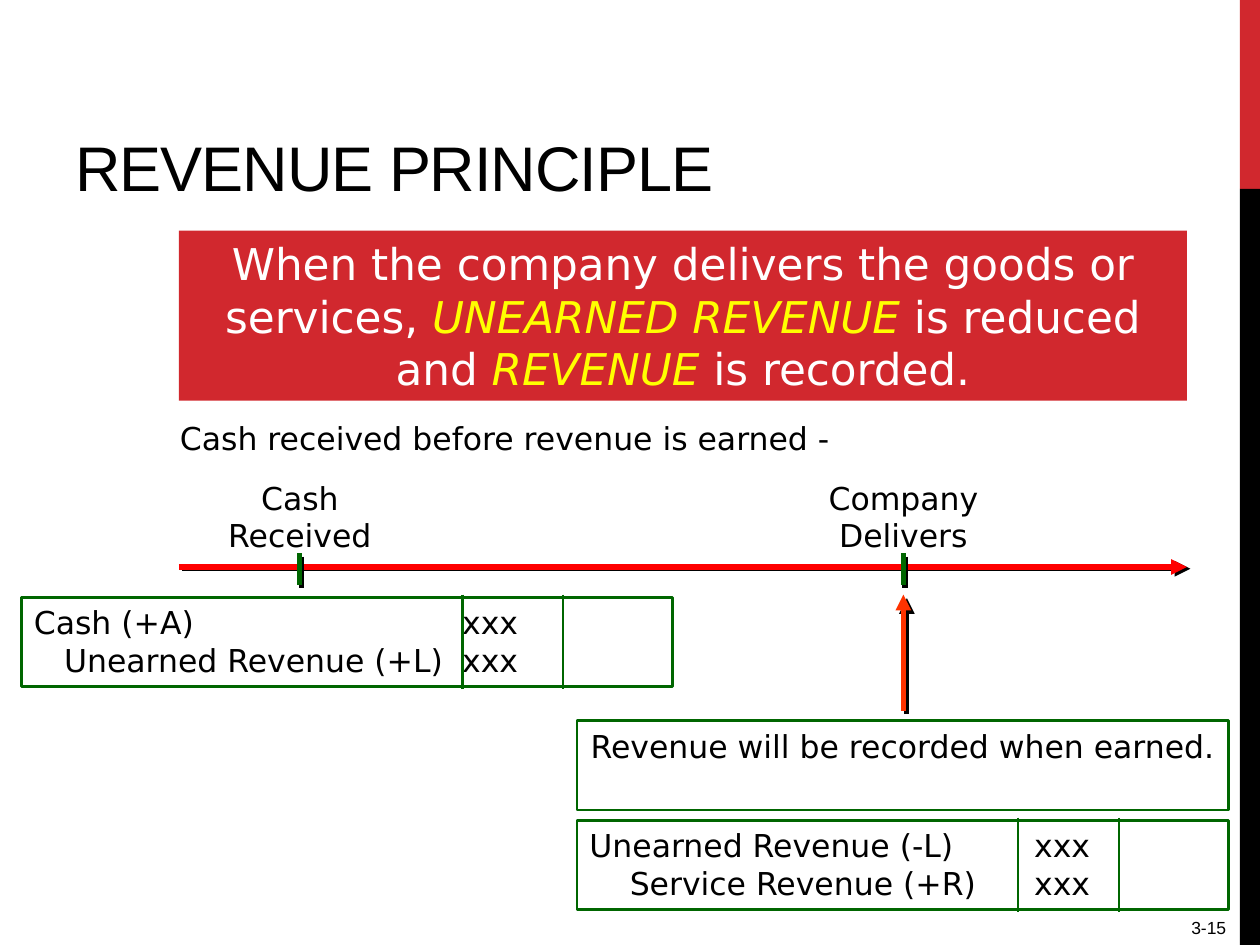
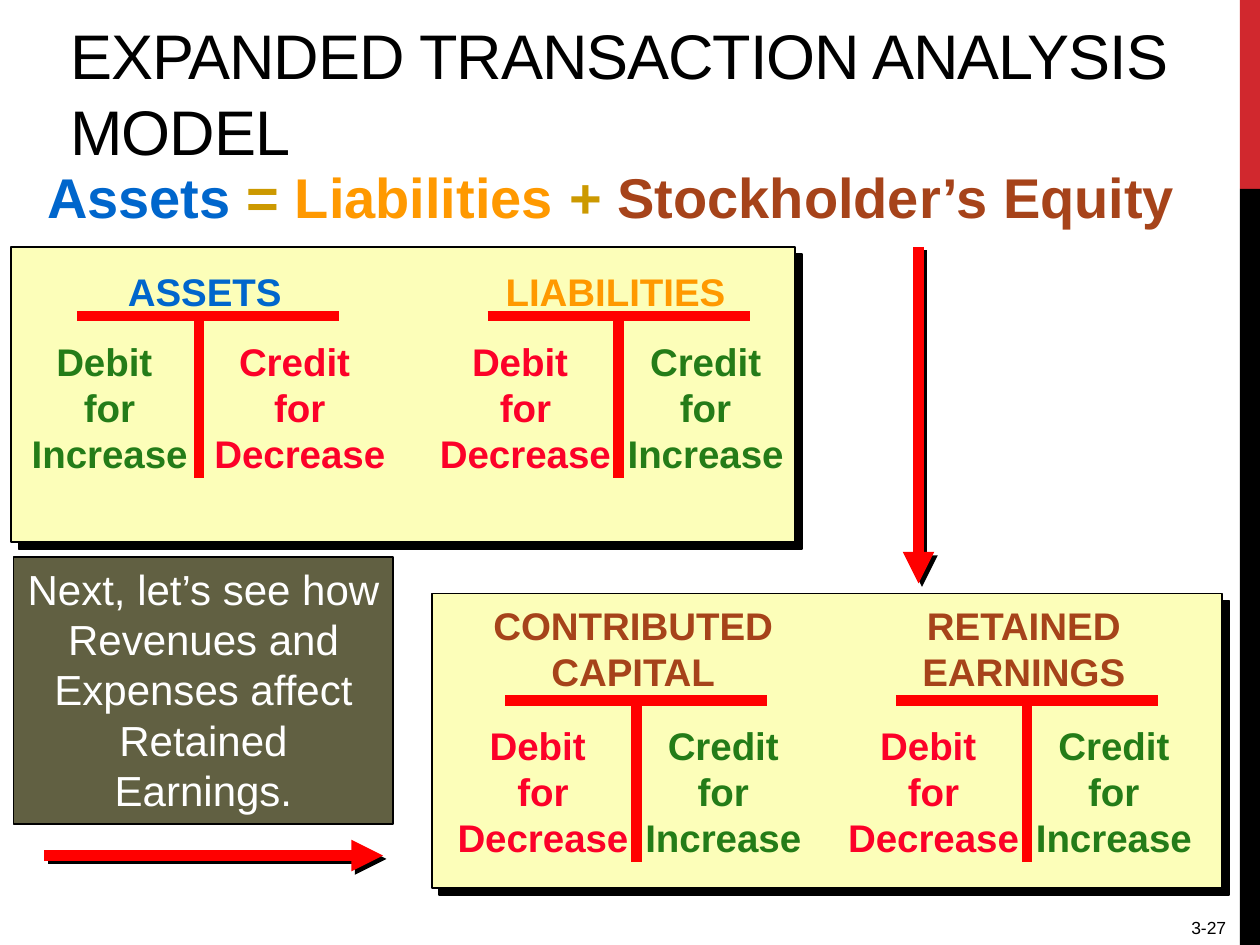
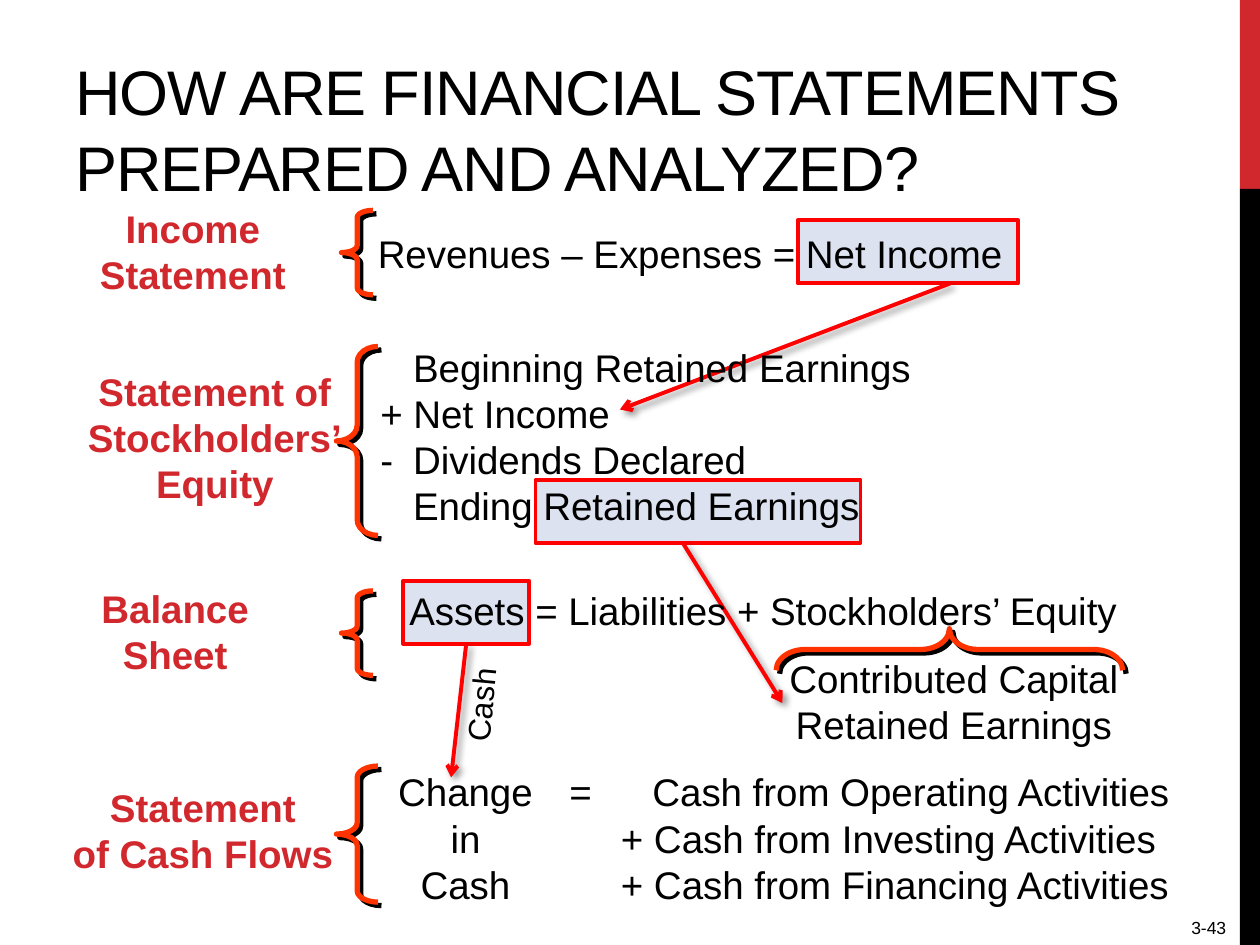
import dataclasses

import pptx
import pptx.dml.color
import pptx.enum.shapes
import pptx.enum.text
import pptx.oxml
import pptx.oxml.ns
import pptx.util

PX = 9144  # EMU in one px, 100 px to the inch
SHAPE = pptx.enum.shapes.MSO_SHAPE
ALIGN = pptx.enum.text.PP_ALIGN
ANCHOR = pptx.enum.text.MSO_ANCHOR
LEFT, CENTER, RIGHT = ALIGN.LEFT, ALIGN.CENTER, ALIGN.RIGHT


@dataclasses.dataclass(frozen=True)
class Theme:
    # colours
    black: str = "000000"
    white: str = "FFFFFF"
    brand: str = "D1282E"
    red: str = "FF0000"
    orange_red: str = "FF3300"
    yellow: str = "FFFF00"
    ledger: str = "006600"
    cream: str = "FCFEB9"
    olive: str = "616042"
    highlight: str = "DCE2EF"
    asset: str = "0066CC"
    liability: str = "FF9900"
    equity: str = "A6431A"
    operator: str = "CC9900"
    increase: str = "247C18"
    decrease: str = "FC0128"
    # fonts and type sizes
    sans: str = "Arial"
    wide: str = "DejaVu Sans"
    title: int = 36
    equation: int = 32
    banner: int = 25
    callout: int = 24
    body: int = 22
    label: int = 18
    number: int = 10
    # shadows: opacity in percent, blur in pt, distance in pt, angle in degrees
    axis_shadow: tuple = (100, 0, 2.2, 27)
    tick_shadow: tuple = (100, 0, 2.2, 63)
    hard_shadow: tuple = (100, 0, 2.8, 45)
    panel_shadow: tuple = (100, 0, 5.7, 45)
    soft_shadow: tuple = (40, 4, 3, 45)


T = Theme()


def px(*lengths):
    return [round(n * PX) for n in lengths]


def rgb(color):
    return pptx.dml.color.RGBColor.from_string(color)


def xml(parent, body):
    """Append one DrawingML element to parent."""
    tag, _, rest = body.partition(" ")
    ns = pptx.oxml.ns.nsdecls("a")
    parent.append(pptx.oxml.parse_xml(f"<a:{tag} {ns} {rest}"))


class Deck:
    def __init__(self):
        self.prs = pptx.Presentation()
        self.prs.slide_width, self.prs.slide_height = px(1000, 750)
        self.s = None

    def slide(self, title, number, left=50, top=17):
        self.s = self.prs.slides.add_slide(self.prs.slide_layouts[6])
        self.box(984, 0, 16, 150, fill=T.brand)
        self.box(984, 150, 16, 600, fill=T.black)
        tb = self.text(left, top, 917, 150, title, T.title)
        tb.text_frame.vertical_anchor = ANCHOR.BOTTOM
        for r in tb.text_frame.paragraphs[0].runs:
            r.font._element.set("spc", "-60")
        self.text(850, 723, 133, 27, number, T.number, align=RIGHT)

    def effects(self, sp, shadow):
        """Give a shape or connector its shadow, or none."""
        body = ""
        if shadow:
            alpha, blur, dist, angle = shadow
            body = (f'<a:outerShdw blurRad="{round(blur * 12700)}" '
                    f'dist="{round(dist * 12700)}" dir="{angle * 60000}" '
                    f'algn="ctr" rotWithShape="0"><a:srgbClr val="{T.black}">'
                    f'<a:alpha val="{alpha * 1000}"/></a:srgbClr></a:outerShdw>')
        xml(sp._element.spPr, f"effectLst >{body}</a:effectLst>")

    def box(self, x, y, w, h, fill=None, line=None, width=1.0, shadow=None,
            kind=SHAPE.RECTANGLE):
        sp = self.s.shapes.add_shape(kind, *px(x, y, w, h))
        if fill:
            sp.fill.solid()
            sp.fill.fore_color.rgb = rgb(fill)
        else:
            sp.fill.background()
        if line:
            sp.line.color.rgb = rgb(line)
            sp.line.width = pptx.util.Pt(width)
        else:
            sp.line.fill.background()
        self.effects(sp, shadow)
        return sp

    def brace(self, x, y, w, h, rotation=0):
        sp = self.box(x, y, w, h, line=T.orange_red, width=3,
                      shadow=T.hard_shadow, kind=SHAPE.LEFT_BRACE)
        sp.adjustments[0] = h / w / 12
        sp.rotation = rotation

    def line(self, x1, y1, x2, y2, color=T.red, width=6.0, head=None,
             shadow=None):
        c = self.s.shapes.add_connector(
            pptx.enum.shapes.MSO_CONNECTOR.STRAIGHT, *px(x1, y1, x2, y2))
        c.line.color.rgb = rgb(color)
        c.line.width = pptx.util.Pt(width)
        if head:
            xml(c.line._get_or_add_ln(), f'tailEnd type="{head}"/>')
        self.effects(c, shadow)
        return c

    def set_text(self, sp, text, size, color=T.black, font=T.sans, bold=False,
                 align=LEFT, wrap=True, tabs=()):
        """Fill sp with a string, or with (text, colour, italic) parts."""
        tf = sp.text_frame
        tf.word_wrap = wrap
        tf.vertical_anchor = ANCHOR.TOP
        if isinstance(text, str):
            tf.text = text
            styles = None
        else:
            for part, *_ in text:
                tf.paragraphs[0].add_run().text = part
            styles = [style for _, *style in text]
        for p in tf.paragraphs:
            p.alignment = align
            if tabs:
                stops = "".join(f'<a:tab pos="{n}" algn="l"/>' for n in px(*tabs))
                xml(p._p.get_or_add_pPr(), f"tabLst >{stops}</a:tabLst>")
            for i, r in enumerate(p.runs):
                shade, italic = styles[i] if styles else (color, False)
                r.font.name, r.font.size = font, pptx.util.Pt(size)
                r.font.bold, r.font.italic = bold, italic
                r.font.color.rgb = rgb(shade)

    def text(self, x, y, w, h, text, size=T.body, **style):
        tb = self.s.shapes.add_textbox(*px(x, y, w, h))
        self.set_text(tb, text, size, **style)
        return tb

    def ledger_box(self, x, y, text, **style):
        sp = self.box(x, y, 517, 71, line=T.ledger, width=1.5)
        self.set_text(sp, text, T.label, font=T.wide, **style)

    def journal_entry(self, x, y, text, tabs):
        self.ledger_box(x, y, text, tabs=tabs)
        for column in (350, 430):
            self.line(x + column, y - 2, x + column, y + 73, T.ledger, 1.5)

    def t_account(self, x, bar, name, color, label_top, debit, credit, stem=162):
        self.line(x + 58, bar, x + 266, bar)
        self.line(x + stem, bar + 4, x + stem, bar + 128)
        self.text(x, label_top, 319, bar - label_top, name, color=color,
                  bold=True, align=CENTER)
        for left, (side, effect) in ((10, debit), (157, credit)):
            rises = effect == "Increase"
            self.text(x + left, bar + 12, 148 if rises else 156, 119,
                      f"{side}\vfor\v{effect}", bold=True, align=CENTER,
                      color=T.increase if rises else T.decrease)


def revenue_principle(d):
    d.slide("REVENUE PRINCIPLE", "3-15")
    banner = d.box(142, 183, 800, 135, fill=T.brand)
    d.set_text(banner, [
        ("When the company delivers the goods or services, ", T.white, False),
        ("UNEARNED REVENUE", T.yellow, True),
        (" is reduced and ", T.white, False),
        ("REVENUE ", T.yellow, True),
        ("is recorded.", T.white, False),
    ], T.banner, font=T.wide, align=CENTER)
    d.text(133, 328, 550, 40, "Cash received before revenue is earned -",
           T.label, font=T.wide)

    # Timeline with its two events
    d.line(142, 450, 942, 450, width=3, head="triangle", shadow=T.axis_shadow)
    for x, event in ((238, "Cash\vReceived"), (717, "Company Delivers")):
        d.text(x - 79, 375, 158, 70, event, T.label, font=T.wide, align=CENTER)
        d.line(x, 439, x, 464, T.ledger, 3, shadow=T.tick_shadow)
    d.line(717, 564, 717, 472, T.orange_red, 3, "triangle", T.hard_shadow)

    # Journal entries
    d.journal_entry(17, 474, "Cash (+A)\txxx\n\tUnearned Revenue (+L)\txxx",
                    (24, 340, 427))
    d.ledger_box(458, 572, "Revenue will be recorded when earned.", align=CENTER)
    d.journal_entry(458, 651,
                    "Unearned Revenue (-L)\txxx\n\tService Revenue (+R)\txxx",
                    (32, 353, 426))


def transaction_model(d):
    d.slide("EXPANDED TRANSACTION ANALYSIS MODEL", "3-27", left=46, top=-12)
    d.text(1, 124, 968, 64, [
        ("Assets ", T.asset, False),
        ("= ", T.operator, False),
        ("Liabilities ", T.liability, False),
        ("+ ", T.operator, False),
        ("Stockholder’s Equity", T.equity, False),
    ], T.equation, bold=True, align=CENTER)

    # Panels of T-accounts
    for x, y, w in ((9, 196, 622), (343, 471, 627)):
        d.box(x, y, w, 234, T.cream, T.black, 1, T.panel_shadow)
    d.t_account(3, 251, "ASSETS", T.asset, 208, ("Debit ", "Increase"),
                ("Credit ", "Decrease"), stem=155)
    for x, bar, name, color, top in (
            (329, 251, "LIABILITIES", T.liability, 208),
            (343, 556, "CONTRIBUTED\vCAPITAL", T.equity, 473),
            (653, 556, "RETAINED\vEARNINGS", T.equity, 473)):
        d.t_account(x, bar, name, color, top, ("Debit ", "Decrease"),
                    ("Credit", "Increase"))

    # Lead-in to the next step
    callout = d.box(11, 442, 301, 212, T.olive, T.black, 0.75)
    d.set_text(callout, "Next, let’s see how Revenues and Expenses affect "
               "Retained Earnings.", T.callout, color=T.white, align=CENTER)
    for ends in ((35, 679, 304, 679), (729, 196, 729, 463)):
        d.line(*ends, head="triangle", shadow=T.hard_shadow)


def statement_links(d):
    d.slide("HOW ARE FINANCIAL STATEMENTS PREPARED AND ANALYZED?", "3-43")

    # Highlighted amounts and the arrows that carry them on
    assets, *_ = [d.box(x, y, w, 50, T.highlight, T.red, 2.25)
                  for x, y, w in ((320, 461, 100), (425, 381, 258), (633, 175, 175))]
    arrows = [d.line(*ends, width=2.25, head="arrow", shadow=T.soft_shadow)
              for ends in ((370, 511, 358, 617), (754, 225, 492, 325),
                           (542, 431, 621, 558))]
    arrows[0].begin_connect(assets, 2)

    # Statement names
    for x, y, w, h, name in (
            (69, 158, 168, 83, "Income\vStatement"),
            (59, 287, 223, 121, "Statement of\vStockholders’\vEquity"),
            (70, 459, 138, 83, "Balance\vSheet"),
            (47, 617, 228, 83, "Statement\vof Cash Flows")):
        d.text(x, y, w, h, name, color=T.brand, bold=True, align=CENTER, wrap=False)

    # Equations
    for x, y, w, h, equation, align in (
            (290, 178, 517, 47, "Revenues – Expenses = Net Income", LEFT),
            (315, 461, 589, 47, "Assets = Liabilities + Stockholders’ Equity", LEFT),
            (616, 515, 282, 83, "Contributed Capital\vRetained Earnings", CENTER),
            (306, 605, 127, 120, "Change\vin\vCash", CENTER),
            (442, 605, 38, 47, "=", LEFT)):
        d.text(x, y, w, h, equation, align=align, wrap=False)
    d.text(292, 268, 585, 157, "\tBeginning Retained Earnings\n+ Net Income\n"
           "-\tDividends Declared\n\tEnding Retained Earnings", tabs=(26,))
    d.text(483, 605, 470, 120, "\tCash from Operating Activities\n"
           "+ Cash from Investing Activities\n+ Cash from Financing Activities",
           tabs=(25,))
    cash = d.text(342, 539, 79, 40, "Cash", T.label, wrap=False)
    cash.rotation = 275.2

    # Braces
    for frame in ((271, 167, 25, 67), (267, 275, 33, 150), (271, 469, 25, 67),
                  (267, 608, 33, 108), (737, 378, 33, 275, 90)):
        d.brace(*frame)


def main():
    d = Deck()
    revenue_principle(d)
    transaction_model(d)
    statement_links(d)
    d.prs.save("out.pptx")


if __name__ == "__main__":
    main()
